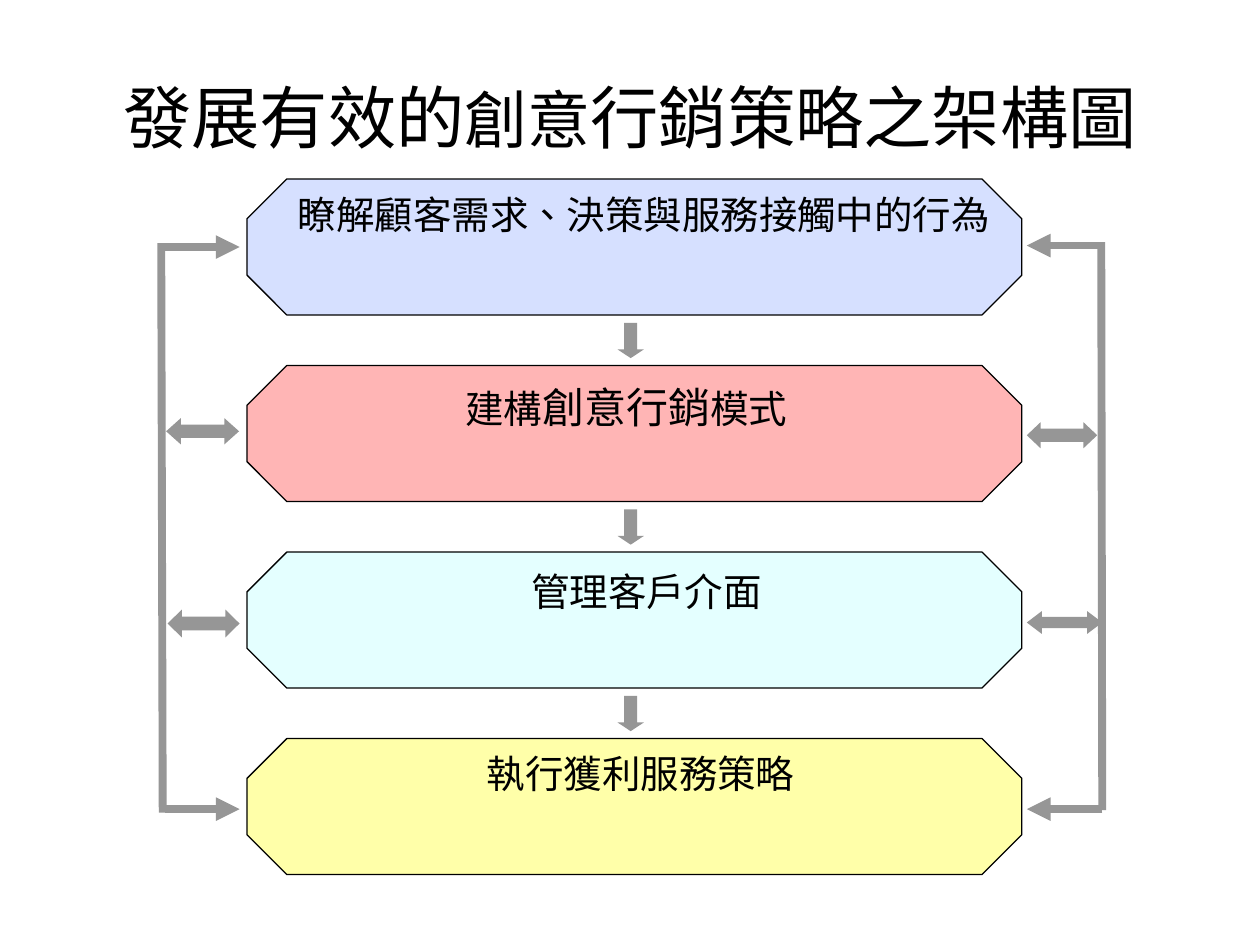
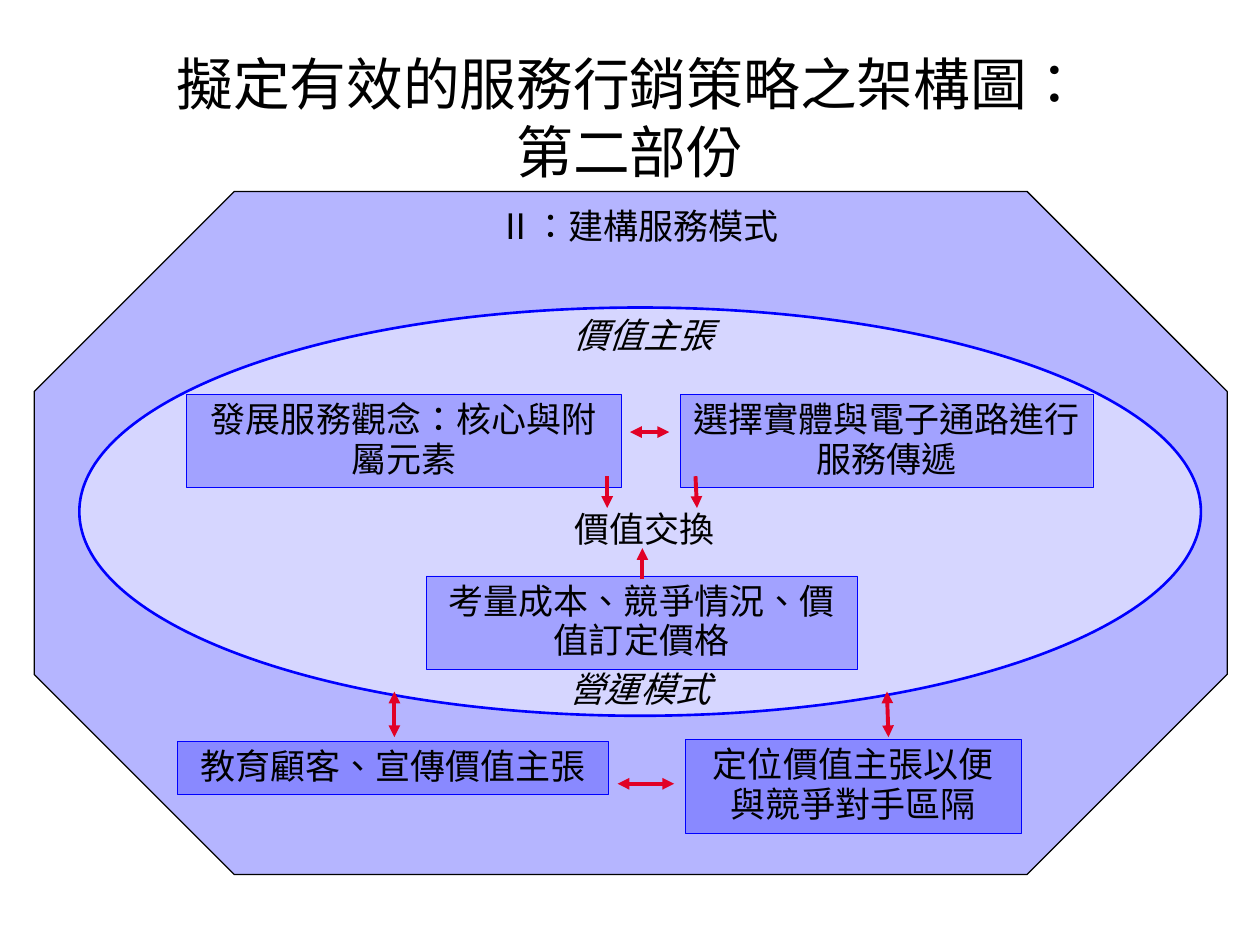
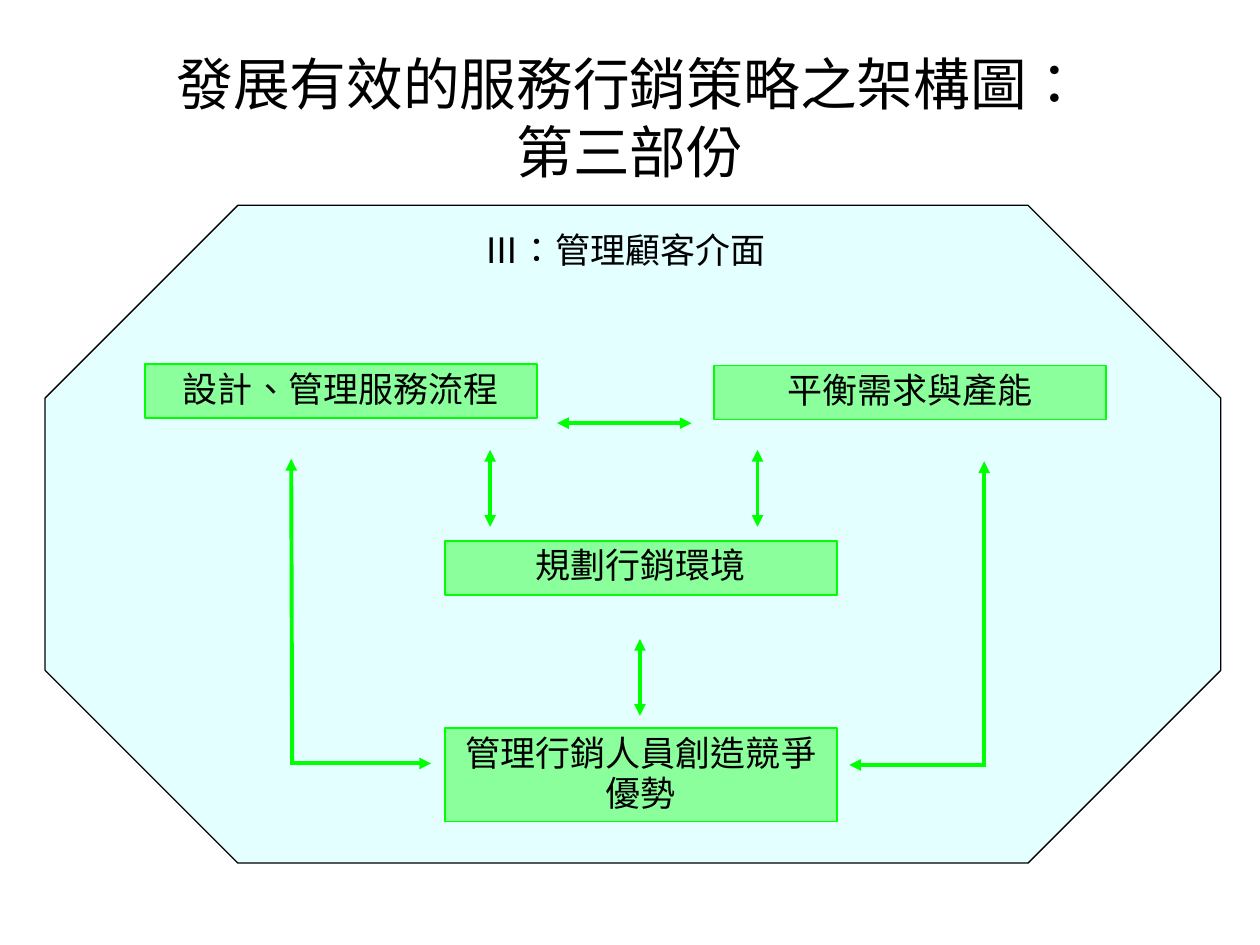
from pptx import Presentation
from pptx.dml.color import RGBColor
from pptx.enum.shapes import MSO_CONNECTOR as Link, MSO_SHAPE as Kind
from pptx.enum.text import MSO_ANCHOR as Anchor, PP_ALIGN as Align
from pptx.oxml.ns import qn
from pptx.util import Cm, Pt
from lxml.etree import SubElement as Sub

BLACK = RGBColor(0x00, 0x00, 0x00)
WHITE = RGBColor(0xFF, 0xFF, 0xFF)
GREY = RGBColor(0x96, 0x96, 0x96)
ROYAL = RGBColor(0x33, 0x66, 0xFF)
BLUE = RGBColor(0x00, 0x00, 0xFF)
RED = RGBColor(0xFF, 0x00, 0x00)
CRIMSON = RGBColor(0xE1, 0x01, 0x26)
CYAN = RGBColor(0xCC, 0xFF, 0xFF)
YELLOW = RGBColor(0xFF, 0xFF, 0x99)
GREEN = RGBColor(0x00, 0xFF, 0x00)
SANS = "Noto Sans CJK SC"
CUT = 0.293

HEAD = [("發展有效的", 39, "Calibri"), ("創意", 36, "Calibri"),
        ("行銷策略之架構圖", 39, "Calibri")]
STEPS = [
    ([("瞭解顧客需求、決策與服務接觸中的行為", 22, "Calibri")],
     ROYAL, 20, 4.88, 0.12, 16.2),
    ([("建構", 22, "Arial"), ("創意行銷", 24, "Calibri"), ("模式", 22, "Arial")],
     RED, 29, 7.01, 0.2, 11.23),
    ([("管理客戶介面", 22, "Calibri")], CYAN, 53, 7.42, 0.2, 11.23),
    ([("執行獲利服務策略", 22, "Calibri")], YELLOW, 84, 5.97, 0.1, 13.89),
]
STEP_TOP, STEP_GAP = 3.61, 3.76
SWAPS = [
    ((20.7, 8.51, 1.42, 0.53), 0.53),
    ((20.7, 12.32, 1.52, 0.46), 0.66),
    ((3.38, 12.29, 1.45, 0.56), 0.51),
    ((3.35, 8.43, 1.47, 0.53), 0.56),
]
LOOPS = [(3.33, 4.98, 4.83, 4.98), (3.33, 16.31, 4.83, 16.31),
         (22.22, 16.31, 20.7, 16.31), (22.22, 4.95, 20.7, 4.95)]
RAILS = [(3.25, 4.9, 3.28, 16.38), (22.2, 4.88, 22.22, 16.33)]

PARTS = [
    {
        "title": "擬定有效的服務行銷策略之架構圖：\v第二部份",
        "frame": (0.69, 3.86, 24.05, 13.77), "back": (BLUE, 29),
        "oval": [(1.6, 6.2, 22.61, 8.23)],
        "box": (BLUE, 24, 0.25),
        "boxes": [
            ("發展服務觀念：核心與附屬元素", (3.76, 7.95, 8.76, 1.88)),
            ("選擇實體與電子通路進行服務傳遞", (13.72, 7.95, 8.31, 1.88)),
            ("考量成本、競爭情況、價值訂定價格", (8.59, 11.61, 8.69, 1.88)),
            ("教育顧客、宣傳價值主張", (3.58, 14.94, 8.69, 1.07)),
            ("定位價值主張以便與競爭對手區隔", (13.82, 14.91, 6.76, 1.88)),
        ],
        "labels": [
            ("Ⅱ：建構服務模式", (7.26, 4.06, 11.23, 1.09), False),
            ("價值交換", (10.41, 10.16, 5.16, 1.07), False),
            ("價值主張", (9.02, 6.25, 7.92, 1.07), True),
            ("營運模式", (9.07, 13.39, 7.67, 1.07), True),
        ],
        "ink": CRIMSON,
        "one": [(12.24, 9.6, 12.24, 10.24), (14.02, 9.6, 14.05, 10.24),
                (12.95, 11.68, 12.95, 11.05)],
        "two": [(12.7, 8.71, 13.49, 8.71), (12.45, 15.8, 13.59, 15.8),
                (7.95, 13.94, 7.95, 14.86), (17.88, 13.94, 17.91, 14.86)],
    },
    {
        "title": "發展有效的服務行銷策略之架構圖：\v第三部份",
        "frame": (0.91, 4.14, 23.7, 13.26), "back": (CYAN, 53),
        "oval": [],
        "box": (GREEN, 39, 1),
        "boxes": [
            ("設計、管理服務流程", (2.92, 7.34, 7.9, 1.09)),
            ("平衡需求與產能", (14.4, 7.37, 7.9, 1.09)),
            ("規劃行銷環境", (8.97, 10.9, 7.9, 1.09)),
            ("管理行銷人員創造競爭優勢", (8.97, 14.68, 7.9, 1.88)),
        ],
        "labels": [("Ⅲ：管理顧客介面", (6.99, 4.55, 11.23, 1.09), False)],
        "ink": GREEN,
        "one": [(5.89, 15.42, 5.87, 9.25), (5.89, 15.39, 8.69, 15.39),
                (19.84, 15.47, 19.84, 9.3), (19.84, 15.42, 17.12, 15.42)],
        "two": [(11.23, 8.53, 13.94, 8.53), (9.88, 9.07, 9.88, 10.62),
                (15.27, 9.07, 15.27, 10.62), (12.9, 12.88, 12.9, 14.43)],
    },
]


def write(shape, runs, space=None, slant=False, anchor=Anchor.TOP):
    frame = shape.text_frame
    frame.word_wrap = True
    frame.vertical_anchor = anchor
    frame.text = "".join(text for text, _, _ in runs[:1])
    para = frame.paragraphs[0]
    para.alignment = Align.CENTER
    if space:
        para.line_spacing = space
    for text, _, _ in runs[1:]:
        para.add_run().text = text
    styles = runs if len(runs) > 1 else runs * len(para.runs)
    for run, (_, size, face) in zip(para.runs, styles):
        font = run.font
        font.size, font.name, font.italic = Pt(size), face, slant
        font.color.rgb = BLACK
        props = run._r.get_or_add_rPr()
        props.set("lang", "zh-TW")
        Sub(props, qn("a:ea")).set("typeface", SANS)


def label(slide, spot, runs, **look):
    write(slide.shapes.add_textbox(*map(Cm, spot)), runs, **look)


def title(slide, runs):
    label(slide, (1.27, 0.76, 22.86, 3.18), runs, anchor=Anchor.MIDDLE)


def draw(slide, kind, spot, fill, alpha=100, edge=None, width=0.75, adjust=()):
    shape = slide.shapes.add_shape(kind, *map(Cm, spot))
    shape.shadow.inherit = False
    for i, value in enumerate(adjust):
        shape.adjustments[i] = value
    shape.fill.solid()
    shape.fill.fore_color.rgb = fill
    if alpha < 100:
        color = shape._element.spPr.find(qn("a:solidFill"))[0]
        Sub(color, qn("a:alpha")).set("val", str(alpha * 1000))
    if edge is None:
        shape.line.fill.background()
    else:
        shape.line.color.rgb = edge
        shape.line.width = Pt(width)
    return shape


def link(slide, ends, ink, width, tips=()):
    line = slide.shapes.add_connector(Link.STRAIGHT, *map(Cm, ends))
    line.line.color.rgb = ink
    line.line.width = Pt(width)
    props = line._element.spPr
    for tip in tips:
        Sub(props.find(qn("a:ln")), qn("a:" + tip)).set("type", "triangle")
    Sub(props, qn("a:effectLst"))


def flow(slide):
    title(slide, HEAD)
    for i, (runs, fill, alpha, left, drop, width) in enumerate(STEPS):
        top = STEP_TOP + i * STEP_GAP
        draw(slide, Kind.OCTAGON, (4.98, top, 15.62, 2.74), fill, alpha,
             BLACK, adjust=[CUT])
        label(slide, (left, top + drop, width, 1.19), runs)
        if i < len(STEPS) - 1:
            draw(slide, Kind.DOWN_ARROW, (12.45, top + 2.9, 0.53, 0.71), GREY,
                 adjust=[0.5, 0.33])
    for spot, tip in SWAPS:
        draw(slide, Kind.LEFT_RIGHT_ARROW, spot, GREY, adjust=[0.5, tip])
    for ends in LOOPS:
        link(slide, ends, GREY, 4.5, ["tailEnd"])
    for ends in RAILS:
        link(slide, ends, GREY, 4.5)


def detail(slide, part):
    title(slide, [(part["title"], 32.4, "Calibri")])
    draw(slide, Kind.OCTAGON, part["frame"], *part["back"], BLACK, adjust=[CUT])
    for spot in part["oval"]:
        draw(slide, Kind.OVAL, spot, WHITE, 45, BLUE, 1.5)
    fill, alpha, width = part["box"]
    for text, spot in part["boxes"]:
        box = draw(slide, Kind.RECTANGLE, spot, fill, alpha, fill, width)
        write(box, [(text, 20, SANS)], space=0.95)
    for text, spot, slant in part["labels"]:
        label(slide, spot, [(text, 20, SANS)], space=0.95, slant=slant)
    for ends in part["one"]:
        link(slide, ends, part["ink"], 2.25, ["tailEnd"])
    for ends in part["two"]:
        link(slide, ends, part["ink"], 2.25, ["headEnd", "tailEnd"])


def main():
    deck = Presentation()
    deck.slide_width, deck.slide_height = Cm(25.4), Cm(19.05)
    blank = deck.slide_layouts[6]
    flow(deck.slides.add_slide(blank))
    for part in PARTS:
        detail(deck.slides.add_slide(blank), part)
    deck.save("out.pptx")


if __name__ == "__main__":
    main()
